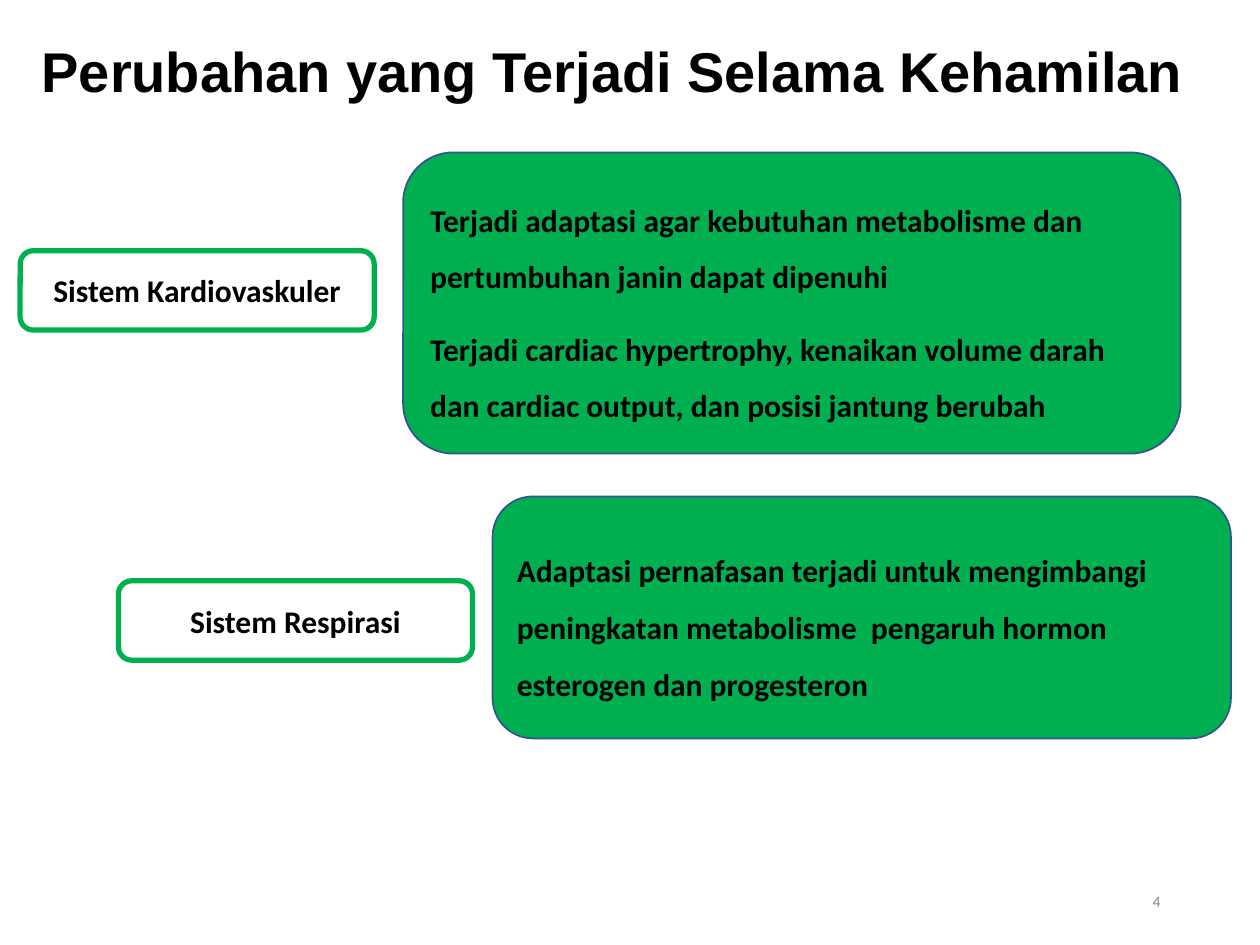
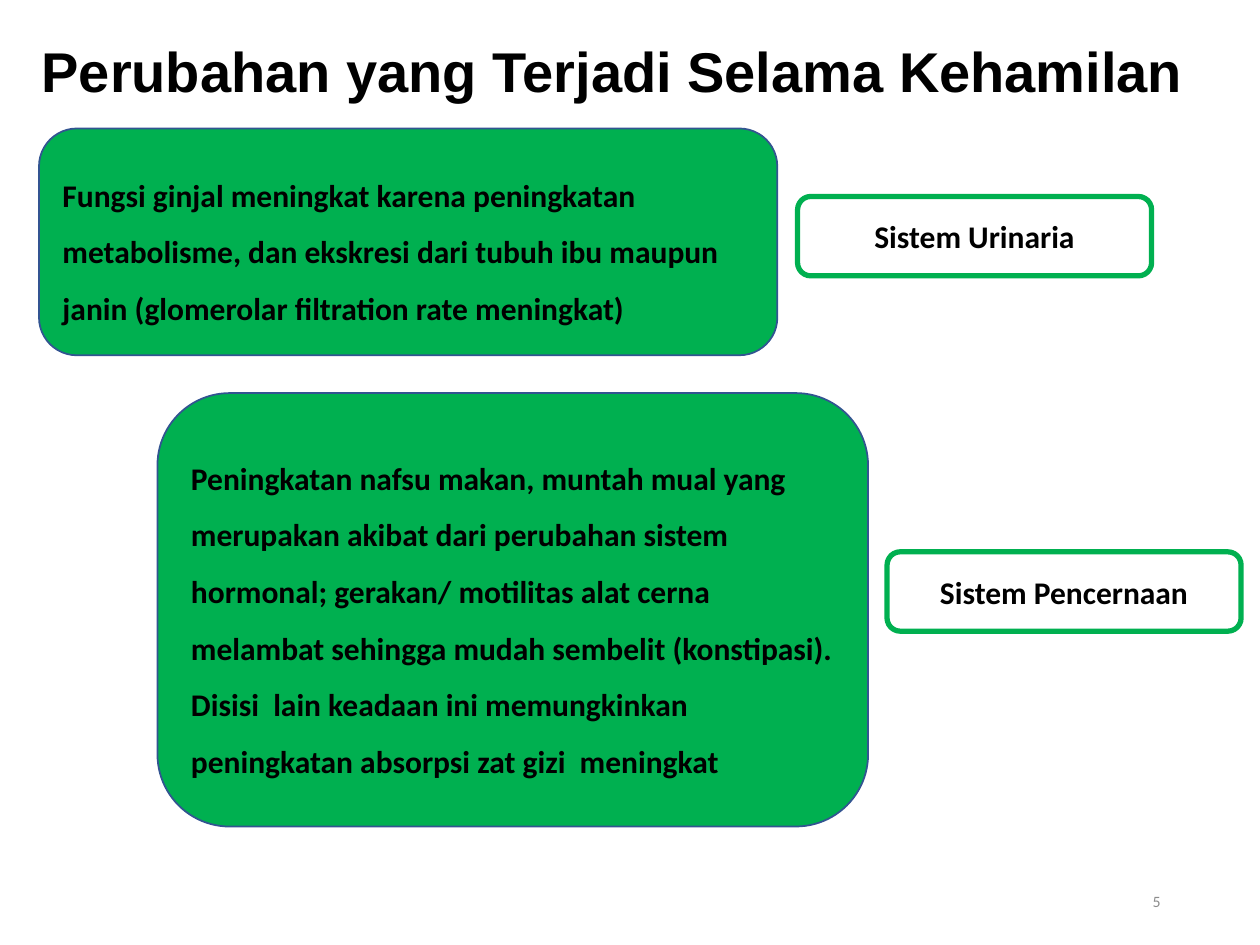
from dataclasses import dataclass
from pptx import Presentation
from pptx.dml.color import RGBColor as Rgb
from pptx.enum.shapes import MSO_SHAPE as Form
from pptx.enum.text import MSO_ANCHOR as Anchor, MSO_AUTO_SIZE as Fit, PP_ALIGN as Align
from pptx.util import Inches, Pt

# Shared look
COLORS = {"ink": "000000", "green": "00B050", "edge": "325491", "gray": "8C8C8C"}
TITLE = "Perubahan yang Terjadi Selama Kehamilan"
FONTS = {
    "title": {"name": "Arial", "size": Pt(32), "bold": True},
    "body": {"name": "Calibri", "size": Pt(18), "bold": True},
    "page": {"name": "Calibri", "size": Pt(9), "bold": False},
}
PARAS = {
    "title": {"alignment": Align.LEFT, "line_spacing": 0.9},
    "label": {"alignment": Align.CENTER},
    "panel": {"alignment": Align.LEFT, "line_spacing": 1.5},
    "page": {"alignment": Align.RIGHT},
}
FRAME = {"word_wrap": True, "auto_size": Fit.NONE, "vertical_anchor": Anchor.MIDDLE}

# Grid of 100 columns by 75 rows
COLS, ROWS = 100, 75
WIDE, HIGH = Inches(10), Inches(7.5)
LABEL = (28.1, 6.3)


@dataclass
class Box:
    x: float
    y: float
    w: float
    h: float

    def place(self) -> tuple[int, ...]:
        col, row = WIDE / COLS, HIGH / ROWS
        return (round(self.x * col), round(self.y * row),
                round(self.w * col), round(self.h * row))


@dataclass
class Topic:
    name: str
    spot: tuple[float, float]
    panel: Box
    texts: list[str]


HEAD = Box(2.3, 2.3, 94.5, 7.2)
PAGE = Box(70.6, 69.5, 22.5, 4)

PAGES = {
    4: [
        Topic("Sistem Kardiovaskuler", (1.6, 19.9), Box(32, 12.1, 61.7, 23.9), [
            "Terjadi adaptasi agar kebutuhan metabolisme dan pertumbuhan janin "
            "dapat dipenuhi",
            "Terjadi cardiac hypertrophy, kenaikan volume darah dan cardiac output, "
            "dan posisi jantung berubah"]),
        Topic("Sistem Respirasi", (9.4, 46.1), Box(39.1, 39.4, 58.6, 19.2), [
            "Adaptasi pernafasan terjadi untuk mengimbangi peningkatan metabolisme  "
            "pengaruh hormon esterogen dan progesteron"]),
    ],
    5: [
        Topic("Sistem Urinaria", (63.3, 15.6), Box(3.1, 10.2, 58.6, 18), [
            "Fungsi ginjal meningkat karena peningkatan metabolisme, dan ekskresi "
            "dari tubuh ibu maupun janin (glomerolar filtration rate meningkat)"]),
        Topic("Sistem Pencernaan", (70.4, 43.8), Box(12.5, 31.2, 56.4, 34.4), [
            "Peningkatan nafsu makan, muntah mual yang merupakan akibat dari "
            "perubahan sistem hormonal; gerakan/ motilitas alat cerna melambat "
            "sehingga mudah sembelit (konstipasi). Disisi  lain keadaan ini "
            "memungkinkan peningkatan absorpsi zat gizi  meningkat"]),
    ],
}


def color(key: str) -> Rgb:
    return Rgb.from_string(COLORS[key])


def apply(item, values: dict) -> None:
    for key, value in values.items():
        setattr(item, key, value)


def write(shape, texts: list[str], para: str, font: str, ink: str = "ink") -> None:
    frame = shape.text_frame
    apply(frame, FRAME)
    for i, text in enumerate(texts):
        line = frame.add_paragraph() if i else frame.paragraphs[0]
        line.text = text
        apply(line, PARAS[para])
        line.space_before = Pt(9 if i else 0)
        apply(line.font, FONTS[font])
        line.font.color.rgb = color(ink)


def draw_box(slide, box: Box, edge: str, width: float, fill: str | None = None):
    shape = slide.shapes.add_shape(Form.ROUNDED_RECTANGLE, *box.place())
    shape.shadow.inherit = False
    if fill:
        shape.fill.solid()
        shape.fill.fore_color.rgb = color(fill)
    else:
        shape.fill.background()
    shape.line.color.rgb = color(edge)
    shape.line.width = Pt(width)
    return shape


def draw_topic(slide, topic: Topic) -> None:
    label = draw_box(slide, Box(*topic.spot, *LABEL), "green", 3)
    write(label, [topic.name], "label", "body")
    panel = draw_box(slide, topic.panel, "edge", 1, "green")
    write(panel, topic.texts, "panel", "body")


def draw_page(deck, number: int, topics: list[Topic]) -> None:
    slide = deck.slides.add_slide(deck.slide_layouts.get_by_name("Title Only"))
    # Title and page number
    title = slide.shapes.title
    apply(title, dict(zip(("left", "top", "width", "height"), HEAD.place())))
    write(title, [TITLE], "title", "title")
    foot = slide.shapes.add_textbox(*PAGE.place())
    write(foot, [str(number)], "page", "page", "gray")
    # Labels and panels
    for topic in topics:
        draw_topic(slide, topic)


def main() -> None:
    deck = Presentation()
    apply(deck, {"slide_width": WIDE, "slide_height": HIGH})
    for number, topics in PAGES.items():
        draw_page(deck, number, topics)
    deck.save("out.pptx")


if __name__ == "__main__":
    main()
